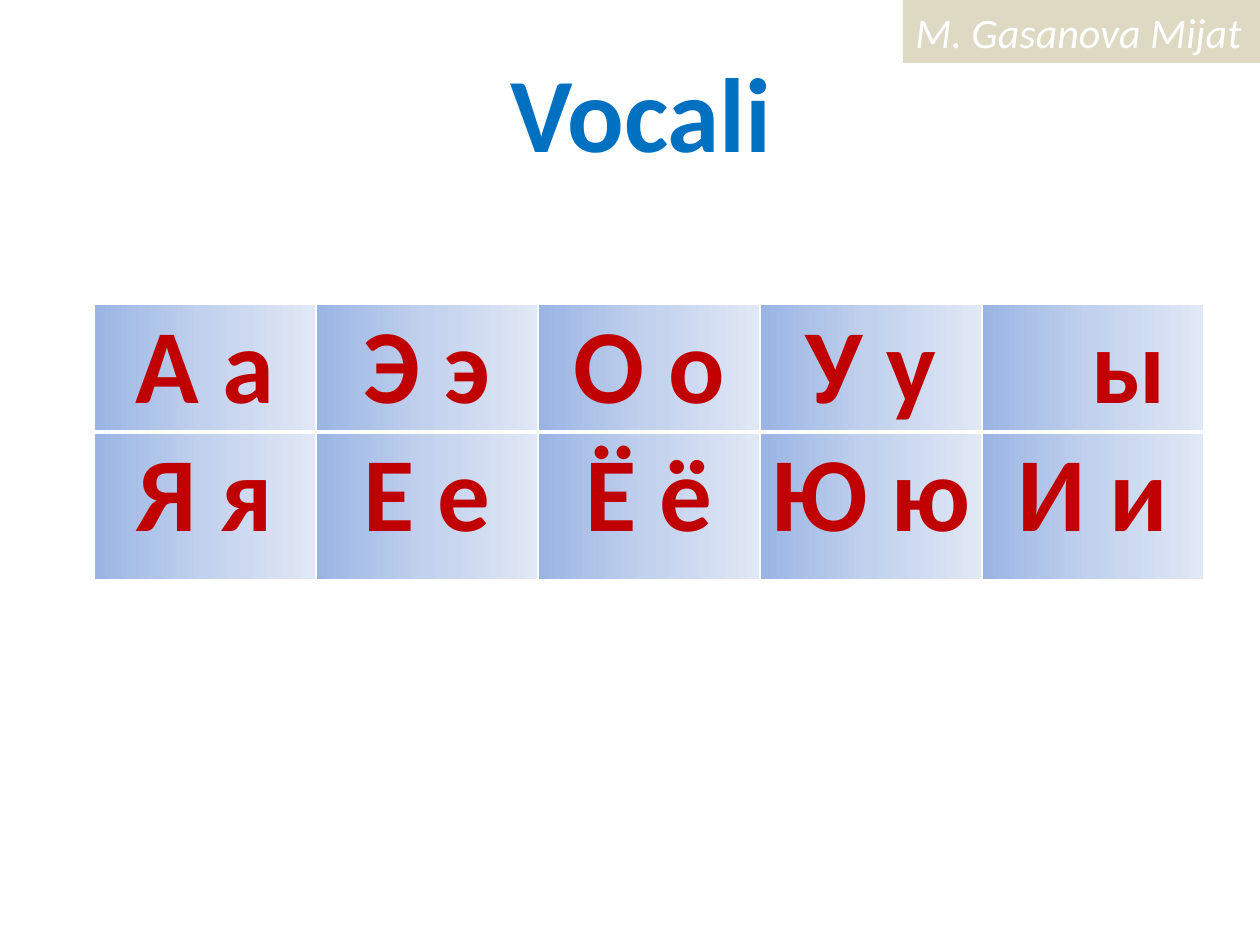
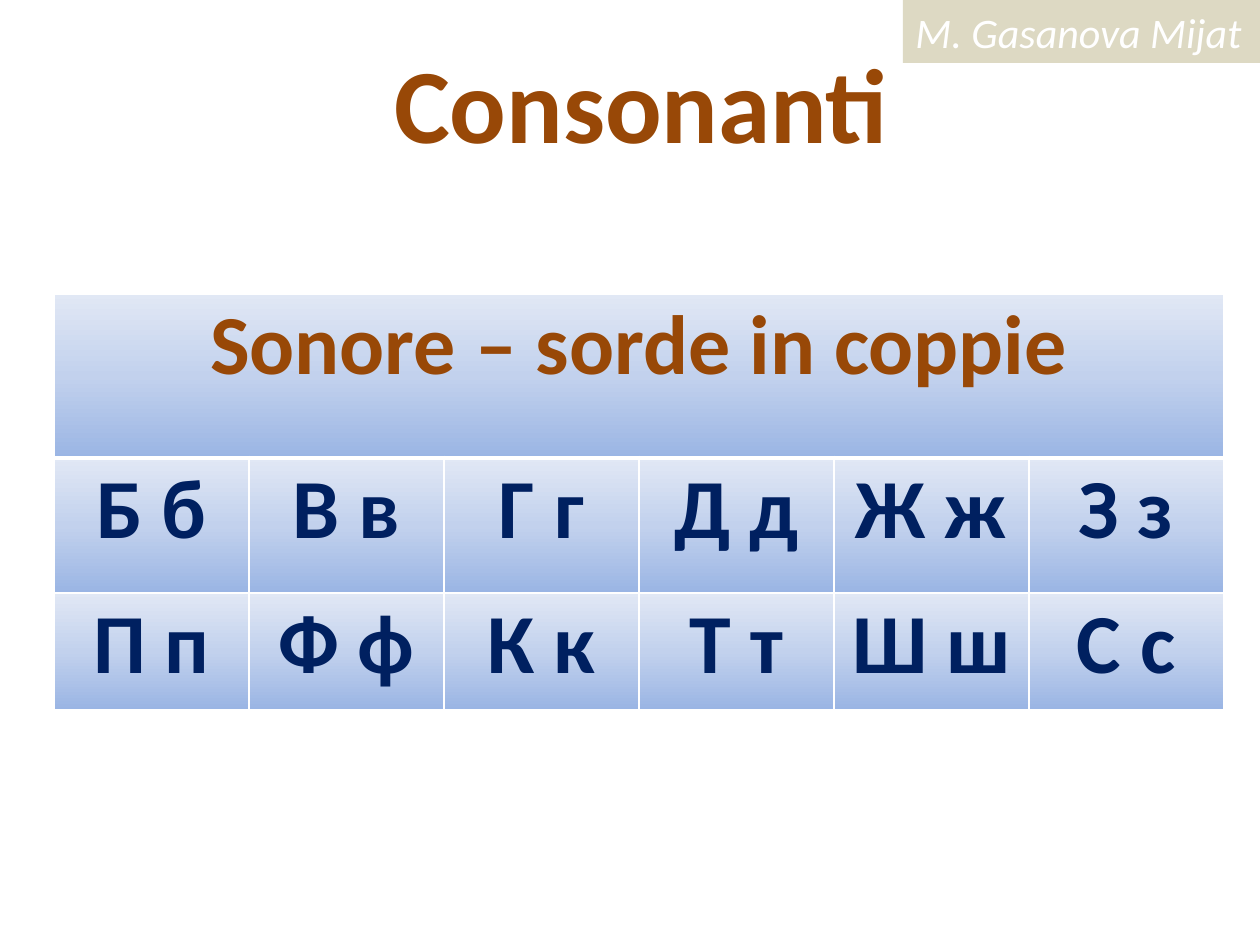
from lxml.etree import SubElement
from pptx import Presentation
from pptx.dml.color import RGBColor
from pptx.enum.shapes import MSO_SHAPE as Shape
from pptx.enum.text import MSO_ANCHOR as Anchor, PP_ALIGN as Align
from pptx.oxml.ns import qn
from pptx.util import Emu, Pt

COLORS = {
    "white": "FFFFFF",
    "sand": "DDD9C3",
    "blue": "0070C0",
    "brown": "984807",
    "red": "C00000",
    "navy": "002060",
}
GRADIENT = [(0, "9AB5E4"), (50, "C2D1ED"), (100, "E1E8F5")]
FONT = "Calibri"
SCALE = 914400 / 126
CELL_INSET = 9
HEADER_RULE, THIN_RULE = 3, 1

SLIDES = [
    {
        "title": "Vocali", "title_color": "blue", "title_inset": 28,
        "left": 94, "top": 304, "column": 222, "heights": [128, 148],
        "rows": [["А а", "Э э", "О о", "У у", "ы"],
                 ["Я я", "Е е", "Ё ё", "Ю ю", "И и"]],
        "size": 60, "row_colors": ["red", "red"], "angle": 0,
        "indents": {"ы": 71},
    },
    {
        "title": "Consonanti", "title_color": "brown", "title_inset": 19,
        "left": 54, "top": 294, "column": 195, "heights": [164, 135, 117],
        "rows": [["Sonore – sorde in coppie"],
                 ["Б б", "В в", "Г г", "Д д", "Ж ж", "З з"],
                 ["П п", "Ф ф", "К к", "Т т", "Ш ш", "С с"]],
        "size": 48, "row_colors": ["brown", "navy", "navy"], "angle": 270,
        "indents": {},
    },
]


def px(*lengths):
    return [Emu(round(length * SCALE)) for length in lengths]


def write(frame, text, size, color, align=Align.CENTER, bold=True, italic=False):
    para = frame.paragraphs[0]
    para.text = text
    para.alignment = align
    font = para.font
    font.name, font.size, font.bold, font.italic = FONT, Pt(size), bold, italic
    font.color.rgb = RGBColor.from_string(COLORS[color])


deck = Presentation()
deck.slide_width, deck.slide_height = px(1260, 945)

for content in SLIDES:
    page = deck.slides.add_slide(deck.slide_layouts[6])

    ribbon = page.shapes.add_shape(Shape.RECTANGLE, *px(903, 0, 357, 63))
    ribbon.shadow.inherit = False
    ribbon.fill.solid()
    ribbon.fill.fore_color.rgb = RGBColor.from_string(COLORS["sand"])
    ribbon.line.fill.background()
    ribbon.text_frame.word_wrap = False
    ribbon.text_frame.vertical_anchor = Anchor.TOP
    write(ribbon.text_frame, "M. Gasanova Mijat", 24, "white", Align.LEFT, False, True)

    title = page.shapes.add_textbox(*px(74, 19, 1134, 157)).text_frame
    title.word_wrap = True
    title.margin_top, title.margin_bottom = px(content["title_inset"], 0)
    write(title, content["title"], 60.3, content["title_color"])

    rows, heights = content["rows"], content["heights"]
    columns = len(rows[-1])
    table = page.shapes.add_table(
        len(rows), columns,
        *px(content["left"], content["top"], content["column"] * columns, sum(heights)),
    ).table
    table.first_row = table.horz_banding = False
    for column in table.columns:
        column.width = px(content["column"])[0]
    for row, height in zip(table.rows, heights):
        row.height = px(height)[0]
    if len(rows[0]) == 1:
        table.cell(0, 0).merge(table.cell(0, columns - 1))

    for r, letters in enumerate(rows):
        for c in range(columns):
            cell = table.cell(r, c)
            if c < len(letters):
                indent = content["indents"].get(letters[c], 0)
                cell.margin_left, cell.margin_right = px(CELL_INSET + indent, CELL_INSET)
                cell.margin_top = cell.margin_bottom = 0
                write(cell.text_frame, letters[c], content["size"], content["row_colors"][r])

            properties = cell._tc.get_or_add_tcPr()
            widths = {
                "lnL": THIN_RULE,
                "lnR": THIN_RULE,
                "lnT": HEADER_RULE if r == 1 else THIN_RULE,
                "lnB": HEADER_RULE if r == 0 else THIN_RULE,
            }
            for side, width in widths.items():
                line = SubElement(properties, qn(f"a:{side}"), w=str(Pt(width)))
                fill = SubElement(line, qn("a:solidFill"))
                SubElement(fill, qn("a:srgbClr"), val=COLORS["white"])
            gradient = SubElement(properties, qn("a:gradFill"), rotWithShape="1")
            stops = SubElement(gradient, qn("a:gsLst"))
            for position, color in GRADIENT:
                stop = SubElement(stops, qn("a:gs"), pos=str(position * 1000))
                SubElement(stop, qn("a:srgbClr"), val=color)
            SubElement(gradient, qn("a:lin"), ang=str(content["angle"] * 60000), scaled="0")

deck.save("out.pptx")
